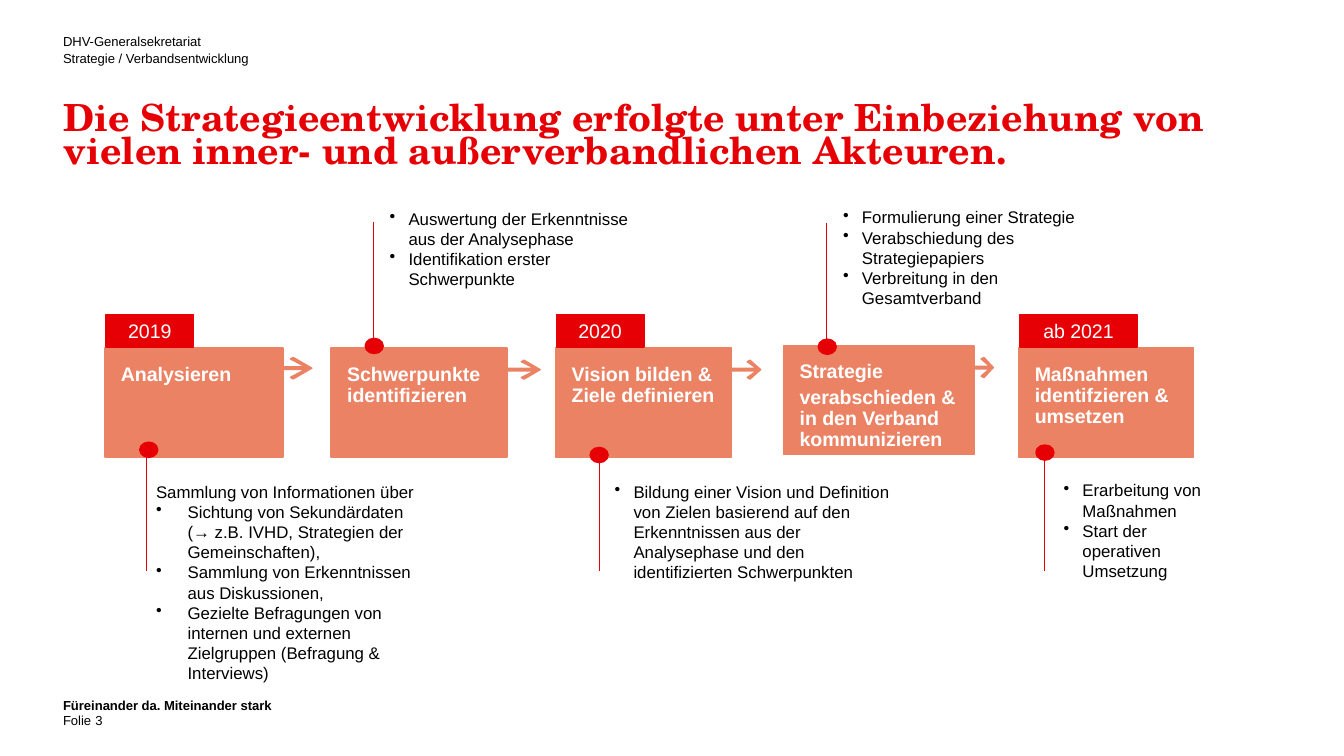
import pptx
import pptx.dml.color
import pptx.enum.shapes
import pptx.enum.text
import pptx.oxml.ns
import pptx.util
from lxml import etree

Pt = pptx.util.Pt
RGBColor = pptx.dml.color.RGBColor
SHAPE = pptx.enum.shapes.MSO_SHAPE
ANCHOR = pptx.enum.text.MSO_ANCHOR
ALIGN = pptx.enum.text.PP_ALIGN

RED = RGBColor(0xE6, 0x00, 0x05)
SALMON = RGBColor(0xEB, 0x82, 0x64)
WHITE = RGBColor(0xFF, 0xFF, 0xFF)
BLACK = RGBColor(0x00, 0x00, 0x00)

TITLE = ("Die Strategieentwicklung erfolgte unter Einbeziehung von vielen "
         "inner- und außerverbandlichen Akteuren.")

# (left, top, width, height), lines, anchor, bold
MARGINALS = [
    ((33.8, 17.3, 129, 26.6),
     ["DHV-Generalsekretariat", "Strategie / Verbandsentwicklung"], ANCHOR.TOP, False),
    ((33.8, 373, 652, 6.5), ["Füreinander da. Miteinander stark"], ANCHOR.TOP, True),
    ((33.8, 380.9, 21.6, 9.4), ["Folie"], ANCHOR.BOTTOM, False),
    ((51.1, 381.6, 162, 8.6), ["3"], ANCHOR.BOTTOM, False),
]

# left, top, width, lines
STEPS = [
    (56.2, 186.5, 95.4, ["Analysieren"]),
    (177.4, 186.5, 94.3, ["Schwerpunkte identifizieren"]),
    (297.7, 186.5, 94.3, ["Vision bilden & Ziele definieren"]),
    (419.8, 185.3, 101.9,
     ["Strategie", "verabschieden & in den Verband kommunizieren"]),
    (545.8, 186.5, 93.6, ["Maßnahmen identifzieren & umsetzen"]),
]
STEP_HEIGHT = 58.3

# left, top, width, height, length of the head
ARROWS = [
    (142.6, 191.5, 24.5, 11.5, 11.5),
    (267.8, 193, 21.6, 10.1, 10.1),
    (391.7, 193, 15.8, 10.1, 7.2),
    (519.1, 191.5, 13, 10.8, 6.5),
]
SHAFT = 1.4

# left, width, period
PERIODS = [(56.9, 46.8, "2019"), (298.1, 46.8, "2020"), (546.5, 62.6, "ab 2021")]
PERIOD_TOP, PERIOD_HEIGHT = 168.5, 17.3

# line x, line top, dot left, dot top
PINS = [
    (78.6, 242.6, 75, 237),
    (200.2, 118.8, 195.8, 181.4),
    (321.3, 242.6, 316.3, 239.8),
    (442.8, 119.5, 438.5, 181.8),
    (559.4, 242.6, 555.1, 238.5),
]
PIN_LENGTH, DOT_WIDTH, DOT_HEIGHT = 63.4, 9.4, 7.9

# (left, top, width, height), bullet indent, lead-in, bullets
NOTES = [
    ((81.4, 257.8, 144, 108.7), 16.9, "Sammlung von Informationen über",
     ["Sichtung von Sekundärdaten (→ z.B. IVHD, Strategien der Gemeinschaften),",
      "Sammlung von Erkenntnissen aus Diskussionen,",
      "Gezielte Befragungen von internen und externen Zielgruppen "
      "(Befragung & Interviews)"]),
    ((206.6, 111.6, 144, 43.9), 10.1, None,
     ["Auswertung der Erkenntnisse aus der Analysephase",
      "Identifikation erster Schwerpunkte"]),
    ((327.1, 257.8, 159, 65.5), 10.1, None,
     ["Bildung einer Vision und Definition von Zielen basierend auf den "
      "Erkenntnissen aus der Analysephase und den identifizierten Schwerpunkten"]),
    ((449.5, 111, 144, 54.7), 10.1, None,
     ["Formulierung einer Strategie", "Verabschiedung des Strategiepapiers",
      "Verbreitung in den Gesamtverband"]),
    ((567.6, 257.2, 144, 54.7), 10.1, None,
     ["Erarbeitung von\nMaßnahmen", "Start der\noperativen\nUmsetzung"]),
]


def points(lengths):
    return [Pt(length) for length in lengths]


def apply(target, values):
    for name, value in values.items():
        setattr(target, name, value)


def set_frame(frame, insets=(0, 0, 0, 0), anchor=ANCHOR.TOP):
    left, top, right, bottom = points(insets)
    apply(frame, dict(margin_left=left, margin_top=top, margin_right=right,
                      margin_bottom=bottom, word_wrap=True, vertical_anchor=anchor,
                      auto_size=pptx.enum.text.MSO_AUTO_SIZE.NONE))


def write(frame, lines, size, color, bold=False, font="Arial", indent=0, lead_in=None,
          **spacing):
    """Fill the frame with one paragraph a line, bulleted where an indent is given."""
    texts = ([lead_in] if lead_in else []) + lines
    for number, text in enumerate(texts):
        paragraph = frame.add_paragraph() if number else frame.paragraphs[0]
        paragraph.text = text
        if indent and text != lead_in:
            properties = paragraph._p.get_or_add_pPr()
            properties.set("marL", str(Pt(indent)))
            properties.set("indent", str(-Pt(indent)))
            bullet = etree.SubElement(properties, pptx.oxml.ns.qn("a:buChar"))
            bullet.set("char", "•")
        apply(paragraph, dict(alignment=ALIGN.LEFT) | spacing)
        apply(paragraph.font, dict(name=font, size=Pt(size), bold=bold))
        paragraph.font.color.rgb = color


def paint(shape, color, line_width):
    shape.shadow.inherit = False
    shape.fill.solid()
    shape.fill.fore_color.rgb = color
    shape.line.color.rgb = color
    shape.line.width = Pt(line_width)


def add_block(shapes, kind, box, color, line_width):
    block = shapes.add_shape(kind, *points(box))
    paint(block, color, line_width)
    return block


def add_arrow(shapes, left, top, width, height, head):
    """Draw an open arrow pointing right as one outline."""
    tip, middle, bottom = left + width, top + height / 2, top + height
    back, notch, half = tip - head, tip - 0.3 * head, SHAFT / 2
    outline = [
        (left, middle - half), (notch, middle - half), (back, top + 0.8),
        (back + 1.5, top), (tip, middle), (back + 1.5, bottom),
        (back, bottom - 0.8), (notch, middle + half), (left, middle + half),
    ]
    corners = [points(corner) for corner in outline]
    builder = shapes.build_freeform(*corners[0])
    builder.add_line_segments(corners[1:], close=True)
    paint(builder.convert_to_shape(), SALMON, 0.75)


def add_pin_line(shapes, x, top):
    line = shapes.add_connector(pptx.enum.shapes.MSO_CONNECTOR.STRAIGHT,
                                *points((x, top, x, top + PIN_LENGTH)))
    line.line.color.rgb = RED
    line.line.width = Pt(0.75)
    etree.SubElement(line._element.spPr, pptx.oxml.ns.qn("a:effectLst"))


def main():
    deck = pptx.Presentation()
    deck.slide_width, deck.slide_height = points((720, 405))
    slide = deck.slides.add_slide(deck.slide_layouts[5])
    shapes = slide.shapes

    title = shapes.title
    apply(title, dict(zip(("left", "top", "width", "height"),
                          points((34.2, 56.2, 652, 46.8)))))
    set_frame(title.text_frame)
    write(title.text_frame, [TITLE], 20, RED, True, "TeX Gyre Schola",
          line_spacing=Pt(18))

    for box, lines, anchor, bold in MARGINALS:
        frame = shapes.add_textbox(*points(box)).text_frame
        set_frame(frame, anchor=anchor)
        write(frame, lines, 7, BLACK, bold, line_spacing=Pt(9))

    for left, top, width, lines in STEPS:
        step = add_block(shapes, SHAPE.RECTANGLE, (left, top, width, STEP_HEIGHT),
                         SALMON, 0.75)
        set_frame(step.text_frame, (8.6, 8.6, 8.6, 8.6))
        write(step.text_frame, lines, 10.5, WHITE, True, line_spacing=0.9,
              space_after=Pt(2.2))
    for arrow in ARROWS:
        add_arrow(shapes, *arrow)

    for left, width, period in PERIODS:
        tag = add_block(shapes, SHAPE.RECTANGLE,
                        (left, PERIOD_TOP, width, PERIOD_HEIGHT), RED, 1)
        set_frame(tag.text_frame, (7.2, 3.6, 7.2, 3.6), ANCHOR.MIDDLE)
        write(tag.text_frame, [period], 10.5, WHITE, alignment=ALIGN.CENTER)

    for box, indent, lead_in, bullets in NOTES:
        frame = shapes.add_textbox(*points(box)).text_frame
        set_frame(frame, (2.2, 0, 0, 0))
        write(frame, bullets, 9, BLACK, indent=indent, lead_in=lead_in)

    for x, line_top, dot_left, dot_top in PINS:
        add_pin_line(shapes, x, line_top)
        add_block(shapes, SHAPE.OVAL, (dot_left, dot_top, DOT_WIDTH, DOT_HEIGHT), RED, 1)

    deck.save("out.pptx")


if __name__ == "__main__":
    main()
